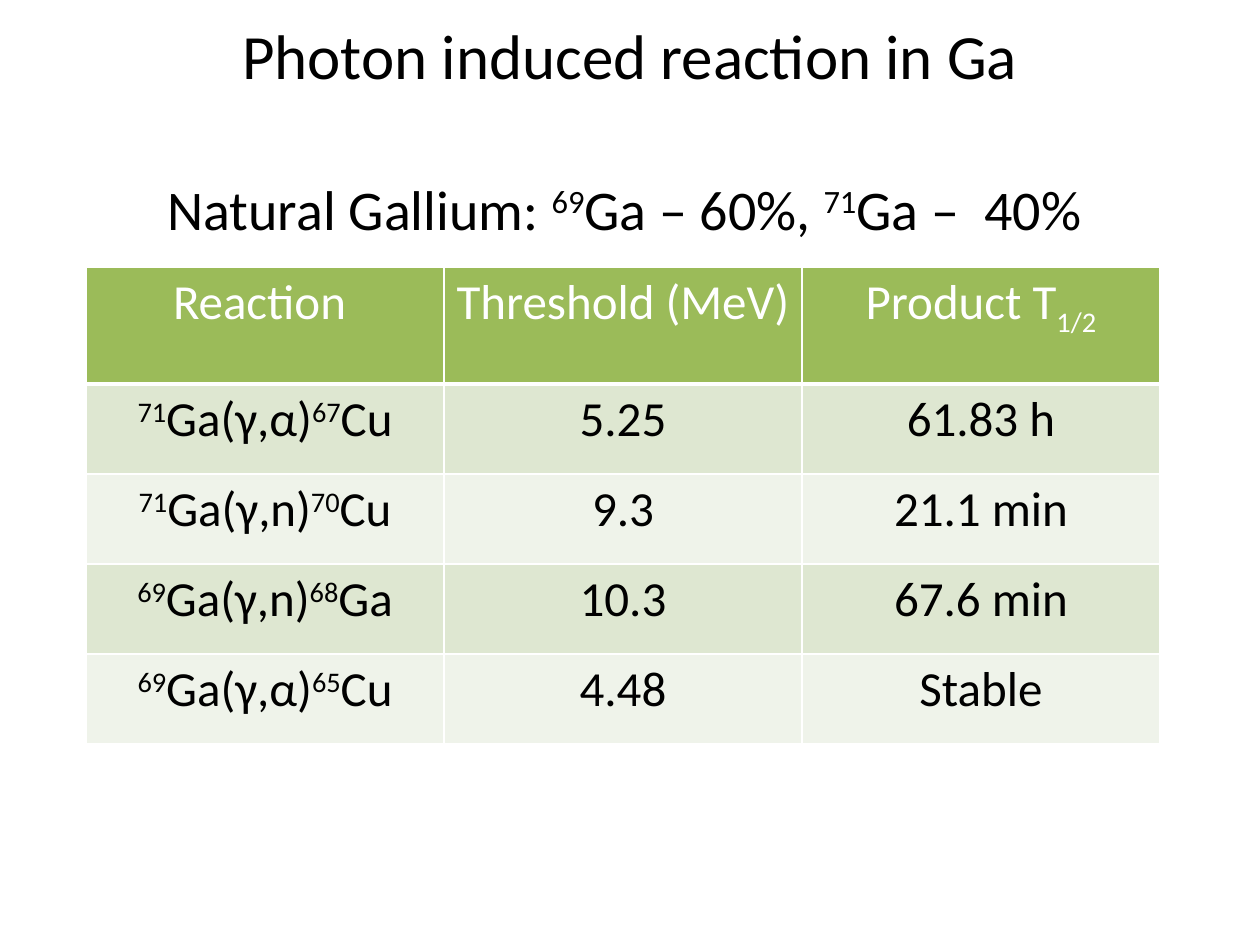
from lxml.etree import SubElement
from pptx import Presentation
from pptx.dml.color import RGBColor
from pptx.enum.text import MSO_ANCHOR as Anchor, PP_ALIGN as Align
from pptx.oxml.ns import qn
from pptx.util import Emu, Pt

SCALE = 914400 / 126
FONT = "Calibri"
COLORS = {"ink": "000000", "white": "FFFFFF", "header": "9BBB59",
          "dark_band": "DEE7D1", "light_band": "EFF3EA"}
SUPER, SUB = 30000, -25000

ABUNDANCE = ["Natural Gallium: ", ("69", SUPER), "Ga – 60%, ", ("71", SUPER), "Ga –  40%"]
HEADINGS = [["Reaction "], ["Threshold (MeV)"], ["Product T", ("1/2", SUB)]]
REACTIONS = [
    ("71", "Ga(γ,α)", "67", "Cu", "5.25", "61.83 h"),
    ("71", "Ga(γ,n)", "70", "Cu", "9.3", "21.1 min"),
    ("69", "Ga(γ,n)", "68", "Ga", "10.3", "67.6 min"),
    ("69", "Ga(γ,α)", "65", "Cu", "4.48", "Stable"),
]


def px(length):
    """Turn pixels into EMU."""
    return Emu(round(length * SCALE))


def write(frame, parts, size, color):
    """Write one centred paragraph of plain or (text, baseline) parts."""
    para = frame.paragraphs[0]
    para.alignment = Align.CENTER
    para.font.name = FONT
    para.font.size = Pt(size)
    para.font.color.rgb = RGBColor.from_string(COLORS[color])
    for part in parts:
        text, baseline = (part, 0) if isinstance(part, str) else part
        span = para.add_run()
        span.text = text
        if baseline:
            span.font._element.set("baseline", str(baseline))


def add_line(page, box, parts, size, indent=0):
    """Place a single vertically centred line of text in the box."""
    frame = page.shapes.add_textbox(*map(px, box)).text_frame
    frame.word_wrap = True
    frame.vertical_anchor = Anchor.MIDDLE
    frame.margin_left = px(indent)
    frame.margin_right = frame.margin_top = frame.margin_bottom = 0
    write(frame, parts, size, "ink")


def add_borders(cell, bottom):
    """Give the cell white borders, with its own bottom width in points."""
    properties = cell._tc.get_or_add_tcPr()
    for side, width in (("lnL", 1), ("lnR", 1), ("lnT", 1), ("lnB", bottom)):
        line = SubElement(properties, qn(f"a:{side}"), w=str(Pt(width)))
        fill = SubElement(line, qn("a:solidFill"))
        SubElement(fill, qn("a:srgbClr"), val=COLORS["white"])


def add_reactions(page, box, header_height):
    """Place the table of reactions in the box."""
    rows = [HEADINGS] + [
        [[(target, SUPER), beam, (mass, SUPER), product], [threshold], [half_life]]
        for target, beam, mass, product, threshold, half_life in REACTIONS]
    table = page.shapes.add_table(len(rows), len(HEADINGS), *map(px, box)).table
    row_height = (box[3] - header_height) // len(REACTIONS)
    for column in table.columns:
        column.width = px(box[2] // len(HEADINGS))
    for index, row in enumerate(rows):
        header = index == 0
        table.rows[index].height = px(header_height if header else row_height)
        band = "header" if header else "dark_band" if index % 2 else "light_band"
        for cell, parts in zip(table.rows[index].cells, row):
            cell.margin_left = cell.margin_right = px(10)
            add_borders(cell, 3 if header else 1)
            cell.fill.solid()
            cell.fill.fore_color.rgb = RGBColor.from_string(COLORS[band])
            write(cell.text_frame, parts, 28, "white" if header else "ink")


def main():
    """Build the deck."""
    deck = Presentation()
    deck.slide_width, deck.slide_height = px(1260), px(945)
    page = deck.slides.add_slide(deck.slide_layouts[6])
    add_line(page, (63, 26, 1134, 56), ["Photon induced reaction in Ga"], 36)
    add_reactions(page, (86, 267, 1074, 477), 117)
    add_line(page, (26, 156, 1134, 104), ABUNDANCE, 32, indent=63)
    deck.save("out.pptx")


if __name__ == "__main__":
    main()
